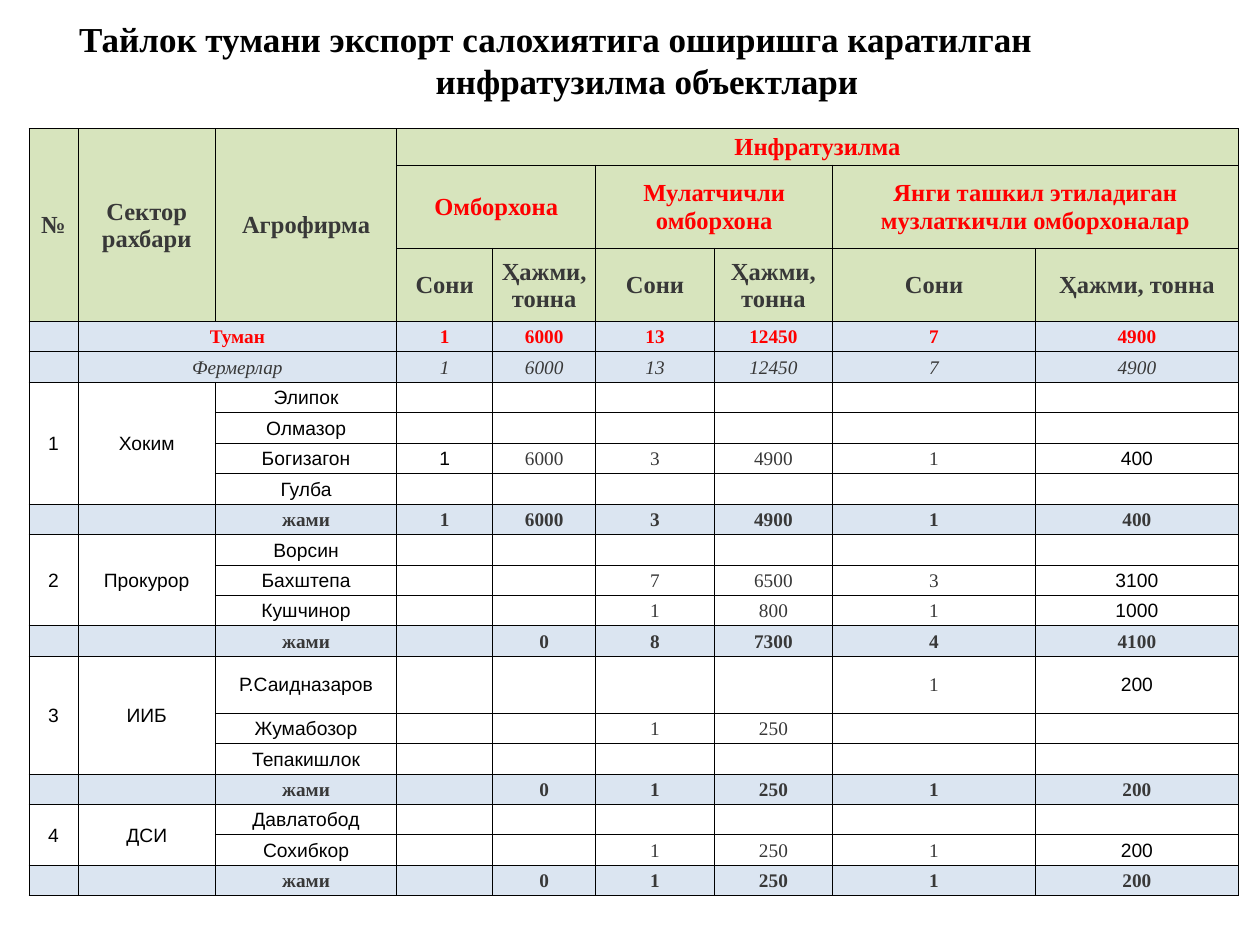
from lxml import etree
from pptx import Presentation
from pptx.dml.color import RGBColor
from pptx.enum.text import MSO_ANCHOR, PP_ALIGN
from pptx.oxml.ns import qn
from pptx.util import Inches, Pt

LEFT, CENTER, MIDDLE = PP_ALIGN.LEFT, PP_ALIGN.CENTER, MSO_ANCHOR.MIDDLE

BLACK = RGBColor(0x00, 0x00, 0x00)
GRAY = RGBColor(0x38, 0x38, 0x38)
RED = RGBColor(0xFF, 0x00, 0x00)
GREEN = RGBColor(0xD7, 0xE4, 0xBD)
BLUE = RGBColor(0xDB, 0xE5, 0xF1)
SERIF, SANS = "Times New Roman", "Arial"

TITLE = ("Тайлок тумани экспорт салохиятига оширишга каратилган "
         "инфратузилма объектлари")
COLUMNS = [0.39, 1.09, 1.44, 0.76, 0.82, 0.94, 0.94, 1.61, 1.61]
HEADER_ROWS = [0.29, 0.66, 0.58]
TABLE_HEIGHT = 6.09
TALL_FARM, TALL_ROW = "Р.Саидназаров", 0.45

# Header cells: row, column, rows spanned, columns spanned, text, colour
HEADER = [
    (0, 0, 3, 1, "№", GRAY),
    (0, 1, 3, 1, "Сектор рахбари", GRAY),
    (0, 2, 3, 1, "Агрофирма", GRAY),
    (0, 3, 1, 6, "Инфратузилма", RED),
    (1, 3, 1, 2, "Омборхона", RED),
    (1, 5, 1, 2, "Мулатчичли омборхона", RED),
    (1, 7, 1, 2, "Янги ташкил этиладиган музлаткичли омборхоналар", RED),
] + [(2, column, 1, 1, text, GRAY) for column, text in
     enumerate(["Сони", "Ҳажми, тонна"] * 3, start=3)]

DISTRICT = ["1", "6000", "13", "12450", "7", "4900"]
EMPTY = [""] * 6

# Sector leader, farms with their values, totals
SECTORS = [
    ("Хоким",
     [("Элипок", EMPTY), ("Олмазор", EMPTY),
      ("Богизагон", ["1", "6000", "3", "4900", "1", "400"]),
      ("Гулба", EMPTY)],
     ["1", "6000", "3", "4900", "1", "400"]),
    ("Прокурор",
     [("Ворсин", EMPTY),
      ("Бахштепа", ["", "", "7", "6500", "3", "3100"]),
      ("Кушчинор", ["", "", "1", "800", "1", "1000"])],
     ["", "0", "8", "7300", "4", "4100"]),
    ("ИИБ",
     [(TALL_FARM, ["", "", "", "", "1", "200"]),
      ("Жумабозор", ["", "", "1", "250", "", ""]),
      ("Тепакишлок", EMPTY)],
     ["", "0", "1", "250", "1", "200"]),
    ("ДСИ",
     [("Давлатобод", EMPTY),
      ("Сохибкор", ["", "", "1", "250", "1", "200"])],
     ["", "0", "1", "250", "1", "200"]),
]


def write_text(frame, text, size=11, font=SERIF, color=GRAY, bold=False,
               italic=False, align=CENTER):
    para = frame.paragraphs[0]
    para.alignment = align
    if not text:
        # An empty cell still needs its text size, or the row grows
        etree.SubElement(para._p, qn("a:endParaRPr"), sz=str(size * 100))
        return para
    span = para.add_run()
    span.text = text
    span.font.size = Pt(size)
    span.font.name = font
    span.font.color.rgb = color
    span.font.bold = bold
    span.font.italic = italic
    return para


class SlideBuilder:
    font = SERIF
    border = BLACK
    border_width = Pt(0.5)

    def __init__(self, page):
        self.page = page

    def title(self, text, left, top, width, height, hanging):
        box = self.page.shapes.add_textbox(
            Inches(left), Inches(top), Inches(width), Inches(height))
        frame = box.text_frame
        frame.word_wrap = True
        frame.vertical_anchor = MIDDLE
        para = write_text(frame, text, size=20, font=self.font, color=BLACK,
                          bold=True, align=LEFT)
        properties = para._p.get_or_add_pPr()
        properties.set("marL", str(Inches(hanging)))
        properties.set("indent", str(-Inches(hanging)))

    def table(self, left, top, widths, heights):
        frame = self.page.shapes.add_table(
            len(heights), len(widths), Inches(left), Inches(top),
            Inches(sum(widths)), Inches(sum(heights)))
        table = frame.table
        table.first_row = table.horz_banding = False
        for column, width in zip(table.columns, widths):
            column.width = Inches(width)
        for row, height in zip(table.rows, heights):
            row.height = Inches(height)
        for cell in table.iter_cells():
            cell.margin_left = cell.margin_right = cell.margin_top = Inches(0.01)
            cell.margin_bottom = 0
            cell.vertical_anchor = MIDDLE
            cell.fill.background()
            self.borders(cell)
        return table

    def borders(self, cell):
        properties = cell._tc.get_or_add_tcPr()
        for position, side in enumerate(("lnL", "lnR", "lnT", "lnB")):
            line = etree.Element(qn(f"a:{side}"), w=str(self.border_width))
            fill = etree.SubElement(line, qn("a:solidFill"))
            etree.SubElement(fill, qn("a:srgbClr"), val=str(self.border))
            properties.insert(position, line)

    def cell(self, table, row, column, text, rows=1, columns=1, fill=None,
             **style):
        cell = table.cell(row, column)
        if rows > 1 or columns > 1:
            cell.merge(table.cell(row + rows - 1, column + columns - 1))
        if fill is not None:
            cell.fill.solid()
            cell.fill.fore_color.rgb = fill
        write_text(cell.text_frame, text, **style)

    def values(self, table, row, texts, **style):
        for column, text in enumerate(texts, start=3):
            self.cell(table, row, column, text, **style)


def main():
    deck = Presentation()
    deck.slide_width, deck.slide_height = Inches(10), Inches(7.5)
    builder = SlideBuilder(deck.slides.add_slide(deck.slide_layouts[6]))
    builder.title(TITLE, 0.53, 0.16, 9, 0.63, hanging=2.83)

    # Row heights: the plain rows share what the others leave
    farms = [farm for _, members, _ in SECTORS for farm, _ in members + [("", [])]]
    plain = (TABLE_HEIGHT - sum(HEADER_ROWS) - TALL_ROW) / (len(farms) + 1)
    heights = HEADER_ROWS + [plain] * 2 + [
        TALL_ROW if farm == TALL_FARM else plain for farm in farms]
    table = builder.table(0.23, 1.02, COLUMNS, heights)

    # Header
    for row, column, rows, columns, text, color in HEADER:
        builder.cell(table, row, column, text, rows, columns, fill=GREEN,
                     size=14, color=color, bold=True)

    # District totals
    for row, label, style in [(3, "Туман", {"color": RED, "bold": True}),
                              (4, "Фермерлар", {"italic": True})]:
        builder.cell(table, row, 0, "", fill=BLUE)
        builder.cell(table, row, 1, label, columns=2, fill=BLUE, **style)
        builder.values(table, row, DISTRICT, fill=BLUE, **style)

    # Sectors
    plain_style = {"font": SANS, "color": BLACK}
    row = 5
    for number, (leader, members, totals) in enumerate(SECTORS, start=1):
        for column, text in enumerate([str(number), leader]):
            builder.cell(table, row, column, text, rows=len(members), **plain_style)
        for farm, values in members:
            for column, text in enumerate([farm] + values, start=2):
                style = {} if 4 <= column <= 7 else plain_style
                builder.cell(table, row, column, text, **style)
            row += 1
        for column, text in enumerate(["", "", "жами"]):
            builder.cell(table, row, column, text, fill=BLUE, bold=True)
        builder.values(table, row, totals, fill=BLUE, bold=True)
        row += 1

    deck.save("out.pptx")


if __name__ == "__main__":
    main()
